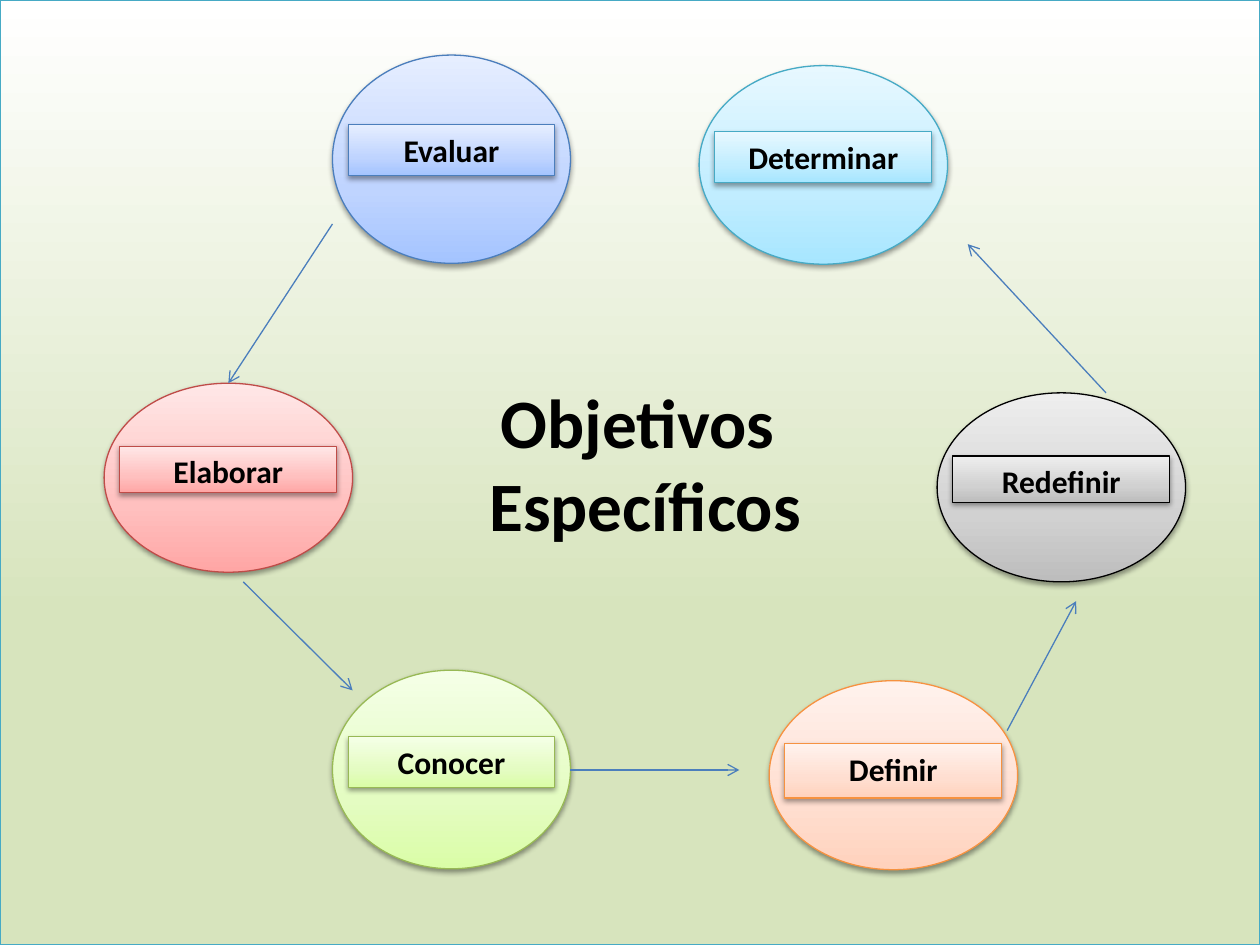
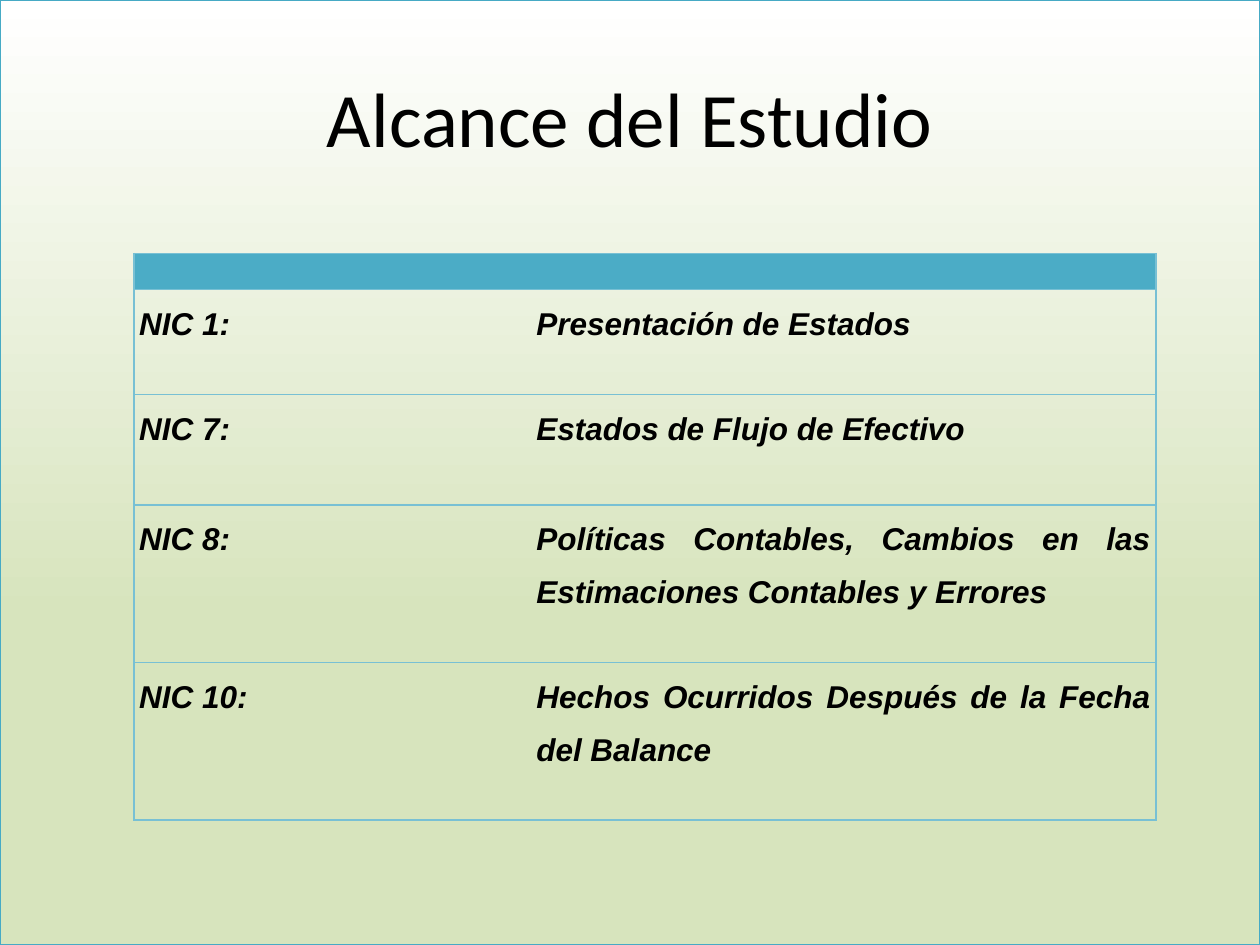
from dataclasses import dataclass

from lxml import etree
from pptx import Presentation
from pptx.dml.color import RGBColor
from pptx.enum import shapes, text
from pptx.oxml import ns
from pptx.util import Pt


@dataclass(frozen=True)
class Theme:
    heading_font: str = "Calibri"
    table_font: str = "Arial"
    ink: str = "000000"
    arrow: str = "4B7EBC"
    border: str = "78C0D4"
    header: str = "4BACC6"
    page: tuple = ("D7E4BD", "D7E4BD", "FFFFFF", "46AAC5")
    blue: tuple = ("A4C4FF", "BFD4FF", "E6EEFF", "4B7EBC")
    red: tuple = ("FFA6A5", "FFC0BF", "FFE7E7", "BF4C48")
    green: tuple = ("DAFDA7", "E4FCC2", "F5FFE7", "98B955")
    orange: tuple = ("FFD2BD", "FFDED0", "FFF2ED", "F69240")
    grey: tuple = ("BDBDBD", "D1D1D1", "EEEEEE", "000000")
    cyan: tuple = ("A7E6FF", "C1EDFF", "E7F8FF", "46AAC5")
    title_size: float = 44
    hub_size: float = 39.6
    body_size: float = 18
    line_width: float = 0.75
    border_width: float = 1


def add_xml(parent, tag, **attributes):
    values = {name: str(value) for name, value in attributes.items()}
    return etree.SubElement(parent, ns.qn(tag), values)


class Deck:
    def __init__(self, theme):
        self.theme = theme
        self.prs = Presentation()
        self.prs.slide_width, self.prs.slide_height = Pt(720), Pt(540)
        self.slide = None

    def new_slide(self):
        self.slide = self.prs.slides.add_slide(self.prs.slide_layouts[6])
        self.panel(shapes.MSO_SHAPE.RECTANGLE, (0, 0, 720, 540), self.theme.page)

    def style_text(self, paragraph, size, font=None, bold=False, italic=False):
        for run in paragraph.runs:
            run.font.name = font or self.theme.heading_font
            run.font.size = Pt(size)
            run.font.bold, run.font.italic = bold, italic
            run.font.color.rgb = RGBColor.from_string(self.theme.ink)

    def panel(self, kind, box, palette):
        *stops, outline = palette
        panel = self.slide.shapes.add_shape(kind, *map(Pt, box))
        panel.line.color.rgb = RGBColor.from_string(outline)
        panel.line.width = Pt(self.theme.line_width)
        panel.shadow.inherit = False
        panel.fill.gradient()
        panel.fill.gradient_angle = 90
        properties = panel._element.spPr
        stop_list = properties.find(".//" + ns.qn("a:gsLst"))
        for stop in list(stop_list):
            stop_list.remove(stop)
        for position, color in zip((0, 35, 100), stops):
            stop = add_xml(stop_list, "a:gs", pos=position * 1000)
            add_xml(stop, "a:srgbClr", val=color)
        shadow = add_xml(properties.find(ns.qn("a:effectLst")), "a:outerShdw",
                         blurRad=Pt(3.1), dist=Pt(1.6), dir=5400000, rotWithShape=0)
        add_xml(add_xml(shadow, "a:srgbClr", val="000000"), "a:alpha", val=38000)
        return panel

    def objective(self, name, box, label_height, palette):
        left, top, width, height = box
        self.panel(shapes.MSO_SHAPE.OVAL, box, palette)
        label = self.panel(shapes.MSO_SHAPE.RECTANGLE,
                           (left + 9, top + height / 3, width - 18, label_height), palette)
        frame = label.text_frame
        frame.text = name
        frame.vertical_anchor = text.MSO_ANCHOR.TOP
        frame.paragraphs[0].alignment = text.PP_ALIGN.CENTER
        self.style_text(frame.paragraphs[0], self.theme.body_size, bold=True)

    def title(self, wording, box, size, bold=False):
        frame = self.slide.shapes.add_textbox(*map(Pt, box)).text_frame
        frame.word_wrap = True
        frame.vertical_anchor = text.MSO_ANCHOR.MIDDLE
        frame.text = wording
        frame.paragraphs[0].alignment = text.PP_ALIGN.CENTER
        self.style_text(frame.paragraphs[0], size, bold=bold)

    def arrow(self, start, end):
        arrow = self.slide.shapes.add_connector(
            shapes.MSO_CONNECTOR.STRAIGHT, *map(Pt, start + end))
        arrow.line.color.rgb = RGBColor.from_string(self.theme.arrow)
        arrow.line.width = Pt(self.theme.line_width)
        add_xml(arrow.line._get_or_add_ln(), "a:tailEnd", type="arrow")
        add_xml(arrow._element.spPr, "a:effectLst")

    def borders(self, cell, sides):
        properties = cell._tc.get_or_add_tcPr()
        for index, side in enumerate("LRTB"):
            edge = add_xml(properties, "a:ln" + side, w=Pt(self.theme.border_width))
            if side in sides:
                add_xml(add_xml(edge, "a:solidFill"), "a:srgbClr", val=self.theme.border)
            else:
                add_xml(edge, "a:noFill")
            properties.insert(index, edge)

    def table(self, rows, origin, widths, heights):
        table = self.slide.shapes.add_table(
            len(heights), len(widths), *map(Pt, origin + (sum(widths), sum(heights)))).table
        table.first_row = table.horz_banding = False
        for column, width in zip(table.columns, widths):
            column.width = Pt(width)
        for row, height in zip(table.rows, heights):
            row.height = Pt(height)
        for cell in table.iter_cells():
            cell.margin_left = cell.margin_right = Pt(3)
            cell.margin_top = cell.margin_bottom = 0
        for cell in table.rows[0].cells:
            cell.fill.solid()
            cell.fill.fore_color.rgb = RGBColor.from_string(self.theme.header)
            self.borders(cell, "LRTB")
            add_xml(cell.text_frame.paragraphs[0]._p, "a:endParaRPr", sz=1000)
        table.cell(0, 0).merge(table.cell(0, 1))
        for row_index, row in enumerate(rows, 1):
            for column_index, wording in enumerate(row):
                cell = table.cell(row_index, column_index)
                cell.text = wording
                cell.fill.background()
                self.borders(cell, ("LTB", "RTB")[column_index])
                paragraph = cell.text_frame.paragraphs[0]
                paragraph.alignment = text.PP_ALIGN.JUSTIFY
                paragraph.line_spacing = 1.5
                self.style_text(paragraph, self.theme.body_size, self.theme.table_font,
                                bold=True, italic=True)


def objectives_slide(deck):
    theme = deck.theme
    deck.new_slide()
    deck.title("Objetivos \vEspecíficos", (196, 219, 345.5, 90), theme.hub_size, bold=True)
    objectives = (
        ("Evaluar", (190, 31.5, 136, 119), 29, theme.blue),
        ("Elaborar", (59.5, 219, 142, 108), 26.5, theme.red),
        ("Conocer", (190, 383, 136, 113.5), 29, theme.green),
        ("Definir", (439.5, 389, 142, 108), 31, theme.orange),
        ("Redefinir", (535.5, 224.5, 142, 108), 26.5, theme.grey),
        ("Determinar", (399.5, 37.5, 142, 113.5), 29, theme.cyan),
    )
    for objective in objectives:
        deck.objective(*objective)
    steps = (
        ((190, 128), (130.5, 219)),
        ((139, 332.5), (201.5, 394.5)),
        ((326, 440), (422.5, 440)),
        ((575.5, 417.5), (615, 343.5)),
        ((632, 224.5), (553, 139.5)),
    )
    for start, end in steps:
        deck.arrow(start, end)


def scope_slide(deck):
    deck.new_slide()
    deck.title("Alcance del Estudio", (36, 21.6, 648, 90), deck.theme.title_size)
    standards = (
        ("NIC 1:", "Presentación de Estados"),
        ("NIC 7:", "Estados de Flujo de Efectivo"),
        ("NIC 8:", "Políticas Contables, Cambios en las Estimaciones Contables y Errores"),
        ("NIC 10:", "Hechos Ocurridos Después de la Fecha del Balance"),
    )
    deck.table(standards, (76.5, 145), (227, 357), (20.5, 60, 63, 90, 90))


def main():
    deck = Deck(Theme())
    objectives_slide(deck)
    scope_slide(deck)
    deck.prs.save("out.pptx")


if __name__ == "__main__":
    main()
